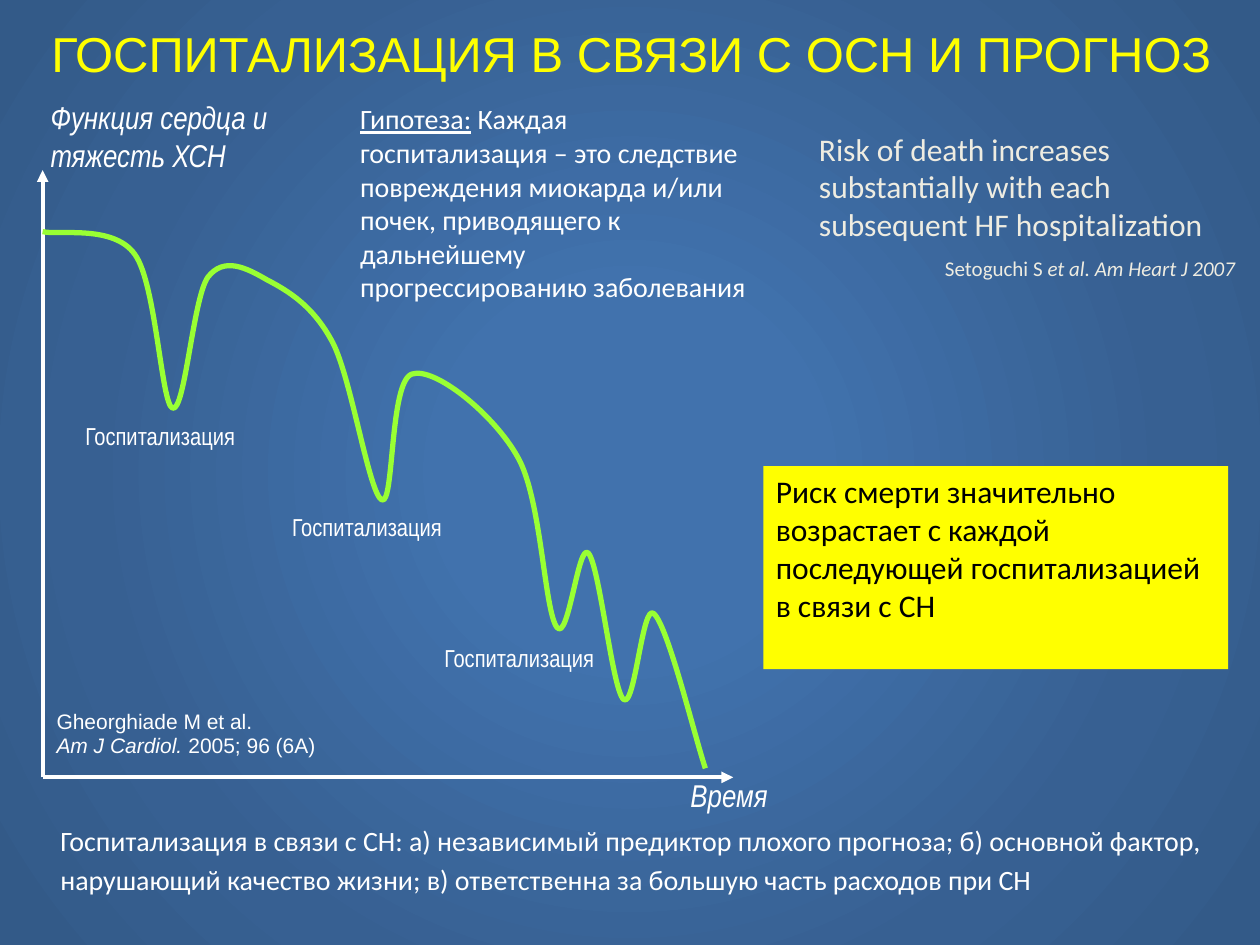
from lxml import etree
from pptx import Presentation
from pptx import util as u
from pptx.dml.color import RGBColor
from pptx.enum import shapes, text
from pptx.oxml.ns import qn

WHITE = RGBColor(0xFF, 0xFF, 0xFF)
CREAM = RGBColor(0xEE, 0xEC, 0xE1)
YELLOW = RGBColor(0xFF, 0xFF, 0x00)
BLACK = RGBColor(0x00, 0x00, 0x00)
LIME = RGBColor(0x99, 0xFF, 0x33)
BACKDROP = [(0, "4172AD"), (23, "4172AD"), (69, "376092"), (97, "335A88")]

# Heart function over time, in hundredths of a centimetre:
# each row holds two control points and the end of one Bezier segment
CURVE_START = (86, 467)
CURVE = [
    [(117, 475), (229, 452), (272, 513)],
    [(315, 572), (325, 815), (348, 823)],
    [(373, 831), (389, 602), (419, 559)],
    [(452, 516), (498, 541), (538, 564)],
    [(582, 587), (632, 617), (671, 691)],
    [(709, 765), (744, 996), (770, 1008)],
    [(795, 1019), (785, 767), (831, 754)],
    [(876, 739), (996, 835), (1044, 922)],
    [(1092, 1006), (1097, 1232), (1123, 1265)],
    [(1146, 1295), (1166, 1092), (1186, 1115)],
    [(1209, 1140), (1234, 1389), (1257, 1410)],
    [(1280, 1430), (1295, 1214), (1318, 1237)],
    [(1346, 1260), (1400, 1483), (1422, 1549)],
]


class SlideWriter:
    """Holds the text style and the slide being built."""

    def __init__(self, slide, font="Calibri", color=WHITE):
        self.slide = slide
        self.font = font
        self.color = color

    def background(self, stops):
        self.slide.background.fill.gradient()
        grad = self.slide.element.find(".//" + qn("a:gradFill"))
        for child in list(grad):
            grad.remove(child)
        stop_list = etree.SubElement(grad, qn("a:gsLst"))
        for percent, color in stops:
            stop = etree.SubElement(stop_list, qn("a:gs"), pos=str(percent * 1000))
            etree.SubElement(stop, qn("a:srgbClr"), val=color)
        circle = etree.SubElement(grad, qn("a:path"), {"path": "circle"})
        sides = dict.fromkeys("ltrb", "50000")
        etree.SubElement(circle, qn("a:fillToRect"), sides)

    def place(self, shape, left, top, width, height):
        shape.left, shape.top = u.Cm(left), u.Cm(top)
        shape.width, shape.height = u.Cm(width), u.Cm(height)

    def style(self, para, size, font=None, color=None, italic=None):
        para.font.size = u.Pt(size)
        para.font.name = font or self.font
        para.font.color.rgb = self.color if color is None else color
        para.font.italic = italic

    def title(self, wording, area, size, font, color):
        title = self.slide.shapes.title
        self.place(title, *area)
        frame = title.text_frame
        frame.text = wording
        frame.vertical_anchor = text.MSO_ANCHOR.MIDDLE
        para = frame.paragraphs[0]
        para.alignment = text.PP_ALIGN.CENTER
        self.style(para, size, font, color)

    def text(self, wording, area, size, inset=True, wrap=True, spacing=None, **look):
        box = self.slide.shapes.add_textbox(*map(u.Cm, area))
        frame = box.text_frame
        frame.word_wrap = wrap
        if not inset:
            frame.margin_left = frame.margin_right = 0
            frame.margin_top = frame.margin_bottom = 0
        para = frame.paragraphs[0]
        para.text = wording
        para.line_spacing = spacing
        self.style(para, size, **look)
        return para

    def span(self, para, wording, italic=None, underline=None):
        span = para.add_run()
        span.text = wording
        span.font.italic = italic
        span.font.underline = underline

    def panel(self, wording, area, size, fill, color):
        panel = self.slide.shapes.add_shape(
            shapes.MSO_SHAPE.RECTANGLE, *map(u.Cm, area))
        panel.shadow.inherit = False
        panel.fill.solid()
        panel.fill.fore_color.rgb = fill
        panel.line.fill.background()
        frame = panel.text_frame
        frame.word_wrap = True
        frame.vertical_anchor = text.MSO_ANCHOR.TOP
        para = frame.paragraphs[0]
        para.text = wording
        para.alignment = text.PP_ALIGN.LEFT
        self.style(para, size, color=color)

    def arrow(self, start, end, width):
        arrow = self.slide.shapes.add_connector(
            shapes.MSO_CONNECTOR.STRAIGHT, *map(u.Cm, start + end))
        arrow.line.color.rgb = self.color
        arrow.line.width = u.Pt(width)
        props = arrow.element.spPr
        etree.SubElement(props.find(qn("a:ln")), qn("a:tailEnd"), type="triangle")
        etree.SubElement(props, qn("a:effectLst"))

    def curve(self, start, segments, color, width):
        builder = self.slide.shapes.build_freeform(*start, scale=u.Cm(0.01))
        builder.add_line_segments(
            [point for segment in segments for point in segment], close=False)
        curve = builder.convert_to_shape()
        curve.shadow.inherit = False
        curve.fill.background()
        curve.line.color.rgb = color
        curve.line.width = u.Pt(width)
        # Join every three straight steps into one Bezier segment
        steps = list(curve.element.iter(qn("a:lnTo")))
        for first, second, third in zip(steps[::3], steps[1::3], steps[2::3]):
            first.addprevious(bezier := etree.Element(qn("a:cubicBezTo")))
            for step in (first, second, third):
                bezier.append(step[0])
                step.getparent().remove(step)


def main():
    deck = Presentation()
    deck.slide_width, deck.slide_height = u.Cm(25.4), u.Cm(19.05)
    page = SlideWriter(deck.slides.add_slide(deck.slide_layouts[5]))
    page.background(BACKDROP)
    page.title("ГОСПИТАЛИЗАЦИЯ В СВЯЗИ С ОСН И ПРОГНОЗ",
               (0.05, 0, 25.35, 2.13), 28, "Arial", YELLOW)

    # English statement and its source
    para = page.text("", (18.8, 5.03, 6.48, 0.76), 12, color=CREAM)
    page.span(para, "Setoguchi S")
    page.span(para, " et al. Am Heart J 2007", italic=True)
    page.text("Risk of death increases substantially with each "
              "subsequent HF hospitalization",
              (16.26, 2.49, 8.51, 2.57), 18, color=CREAM)

    # Axes with their names
    origin = (0.86, 15.67)
    for tip in [(0.86, 3.43), (14.78, 15.67)]:
        page.arrow(origin, tip, 2.25)
    for name, area, wrap in [
        ("Функция сердца и тяжесть ХСН", (1.02, 1.98, 4.39, 1.55), True),
        ("Время", (13.92, 15.65, 1.8, 0.76), False),
    ]:
        page.text(name, area, 18, inset=False, wrap=wrap,
                  font="Arial Narrow", italic=True)

    # Curve with a label under each fall
    page.curve(CURVE_START, CURVE, LIME, 3)
    for left, top in [(1.47, 8.36), (5.64, 10.19), (8.71, 12.83)]:
        page.text("Госпитализация", (left, top, 4.6, 0.86), 14, font="Arial Narrow")

    # Hypothesis
    para = page.text("", (7.01, 1.93, 8.38, 5.74), 16)
    page.span(para, "Гипотеза:", underline=True)
    page.span(para, " Каждая госпитализация – это следствие повреждения миокарда "
                    "и/или почек, приводящего к дальнейшему прогрессированию "
                    "заболевания")

    # Source of the curve
    para = page.text("", (0.89, 14.2, 6.76, 1.47), 12, spacing=0.95, font="Arial")
    page.span(para, "Gheorghiade M et al.")
    para.add_line_break()
    page.span(para, "Am J Cardiol. ", italic=True)
    page.span(para, "2005; 96 (6A)")

    # Conclusions
    page.text("Госпитализация в связи с СН: а) независимый предиктор плохого "
              "прогноза; б) основной фактор, нарушающий качество жизни; "
              "в) ответственна за большую часть расходов при СН",
              (0.97, 16.38, 23.95, 1.78), 16, spacing=1.15)
    page.panel("Риск смерти значительно возрастает с каждой последующей "
               "госпитализацией в связи с СН",
               (15.39, 9.4, 9.37, 4.09), 18, YELLOW, BLACK)

    deck.save("out.pptx")


if __name__ == "__main__":
    main()
